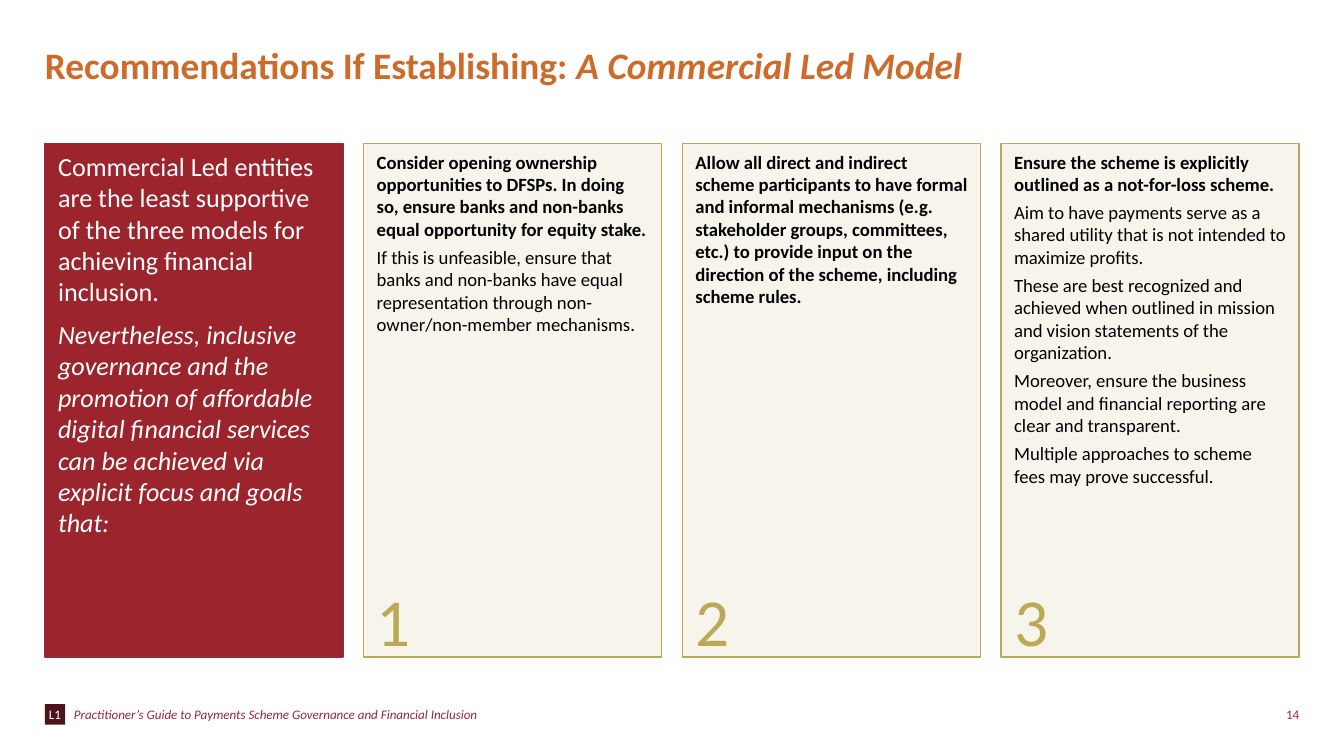
from dataclasses import dataclass
from pptx import Presentation
from pptx.dml.color import RGBColor
from pptx.enum.shapes import MSO_SHAPE
from pptx.enum.text import MSO_ANCHOR, PP_ALIGN
from pptx.util import Pt

RECT = MSO_SHAPE.RECTANGLE
TOP, MID, LOW = MSO_ANCHOR.TOP, MSO_ANCHOR.MIDDLE, MSO_ANCHOR.BOTTOM
LEFT, MIDDLE, RIGHT = PP_ALIGN.LEFT, PP_ALIGN.CENTER, PP_ALIGN.RIGHT


@dataclass(frozen=True)
class Theme:
    font: str = "Calibri"
    orange: str = "CE6B29"
    red: str = "9B242D"
    wine: str = "98273B"
    dark: str = "4C141D"
    cream: str = "F7F5EB"
    gold: str = "BAAA58"
    black: str = "000000"
    white: str = "FFFFFF"
    head: int = 20
    lead: int = 14
    body: int = 10
    digit: int = 36
    small: int = 7


THEME = Theme()

INTRO = [
    "Commercial Led entities are the least supportive of the three models for "
    "achieving financial inclusion.",
    "Nevertheless, inclusive governance and the promotion of affordable digital "
    "financial services can be achieved via explicit focus and goals that:",
]
CARDS = [
    ["Consider opening ownership opportunities to DFSPs. In doing so, ensure banks "
     "and non-banks equal opportunity for equity stake.",
     "If this is unfeasible, ensure that banks and non-banks have equal "
     "representation through non-owner/non-member mechanisms."],
    ["Allow all direct and indirect scheme participants to have formal and informal "
     "mechanisms (e.g. stakeholder groups, committees, etc.) to provide input on "
     "the direction of the scheme, including scheme rules."],
    ["Ensure the scheme is explicitly outlined as a not-for-loss scheme.",
     "Aim to have payments serve as a shared utility that is not intended to "
     "maximize profits.",
     "These are best recognized and achieved when outlined in mission and vision "
     "statements of the organization.",
     "Moreover, ensure the business model and financial reporting are clear and "
     "transparent.",
     "Multiple approaches to scheme fees may prove successful."],
]


def style(para, size, color, bold=False, italic=False, align=LEFT, after=0):
    font = para.font
    font.name, font.size = THEME.font, Pt(size)
    font.color.rgb = RGBColor.from_string(color)
    font.bold, font.italic = bold, italic
    para.alignment, para.space_after = align, Pt(after)


def setup(frame, anchor, pad=None):
    frame.word_wrap = True
    frame.vertical_anchor = anchor
    if pad is not None:
        (frame.margin_left, frame.margin_top,
         frame.margin_right, frame.margin_bottom) = [Pt(v) for v in pad]


def write(frame, texts):
    frame.text = "\n".join(texts)
    return frame.paragraphs


def panel(slide, box, fill, line=None):
    shape = slide.shapes.add_shape(RECT, *[Pt(v) for v in box])
    shape.shadow.inherit = False
    shape.fill.solid()
    shape.fill.fore_color.rgb = RGBColor.from_string(fill)
    if line:
        shape.line.color.rgb = RGBColor.from_string(line)
        shape.line.width = Pt(0.75)
    else:
        shape.line.fill.background()
    return shape.text_frame


def label(slide, box, text, anchor, pad=None, **looks):
    frame = slide.shapes.add_textbox(*[Pt(v) for v in box]).text_frame
    setup(frame, anchor, pad)
    style(write(frame, [text])[0], **looks)


def title(slide, box):
    shape = slide.shapes.title
    shape.left, shape.top, shape.width, shape.height = [Pt(v) for v in box]
    frame = shape.text_frame
    setup(frame, MID, (0, 0, 0, 0))
    para = frame.paragraphs[0]
    style(para, THEME.head, THEME.orange, bold=True)
    para.add_run().text = "Recommendations If Establishing: "
    run = para.add_run()
    run.text = "A Commercial Led Model"
    run.font.italic = True


def intro(slide, box):
    frame = panel(slide, box, THEME.red, THEME.wine)
    setup(frame, TOP)
    for i, para in enumerate(write(frame, INTRO)):
        style(para, THEME.lead, THEME.white, italic=i > 0, after=6)


def card(slide, box, num, texts):
    x, y, w, h = box
    frame = panel(slide, box, THEME.cream, THEME.gold)
    setup(frame, TOP)
    for i, para in enumerate(write(frame, texts)):
        style(para, THEME.body, THEME.black, bold=i == 0, after=3)
    label(slide, (x, y + h - 46, w, 51), str(num), LOW,
          size=THEME.digit, color=THEME.gold, after=3)


def columns(slide, box):
    x, y, w, h = box
    wide = 159.8
    step = (w - wide) / len(CARDS)
    intro(slide, (x, y, wide, h))
    for num, texts in enumerate(CARDS, 1):
        card(slide, (x + num * step, y, wide, h), num, texts)


def footer(slide, box):
    x, y, w, h = box
    frame = panel(slide, (x, y, h, h), THEME.dark)
    setup(frame, MID, (0, 0, 0, 0))
    style(write(frame, ["L1"])[0], THEME.small, THEME.white, align=MIDDLE)
    label(slide, (x + 15.6, y + 1, 243, 9),
          "Practitioner’s Guide to Payments Scheme Governance and Financial Inclusion",
          MID, (0, 0, 7.2, 0), size=THEME.small, color=THEME.wine, italic=True)
    label(slide, (x + w - 24, y + 1, 24, 9), "14", MID, (0, 0, 0, 0),
          size=THEME.small, color=THEME.wine, align=RIGHT)


def main():
    deck = Presentation()
    deck.slide_width, deck.slide_height = Pt(720), Pt(405)
    slide = deck.slides.add_slide(deck.slide_layouts[5])
    title(slide, (24, 22.5, 660, 24.5))
    columns(slide, (24, 77, 672, 275))
    footer(slide, (24, 377.2, 672, 11))
    deck.save("out.pptx")


if __name__ == "__main__":
    main()
